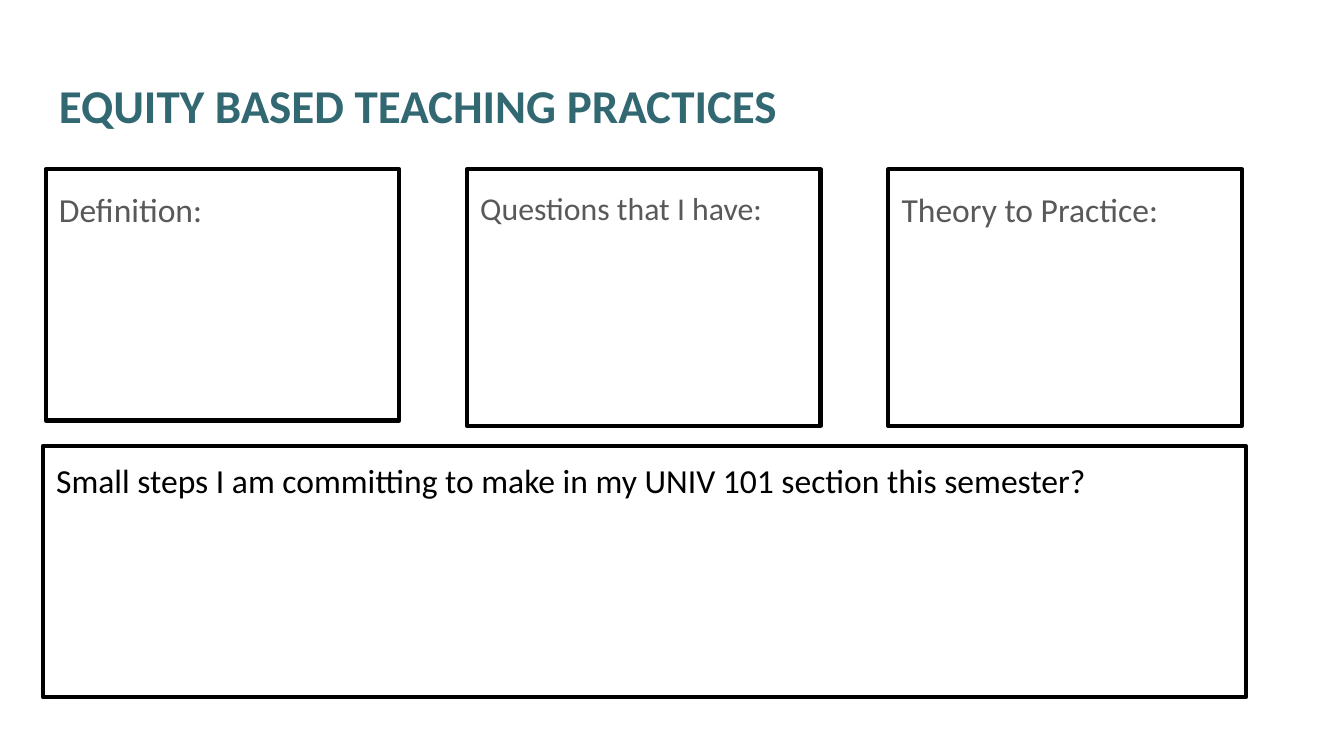
from pptx import Presentation
from pptx.dml.color import RGBColor
from pptx.enum.shapes import MSO_SHAPE as Shape
from pptx.enum.text import MSO_ANCHOR as Anchor, PP_ALIGN as Align
from pptx.util import Pt

COLORS = {"title": "326872", "prompt": "595959", "ink": "000000"}
FONT = "Calibri"
PAD = 7.2
LEFT, TOP, WIDE, PITCH = 24.5, 90.7, 189.4, 225.7
PROMPTS = [
    ("Definition:", 18, 134.6),
    ("Questions that I have:", 17, 137.5),
    ("Theory to Practice:", 18, 137.5),
]


def write(shape, text, size, color, bold=False, space=1.0):
    frame = shape.text_frame
    frame.word_wrap = True
    frame.vertical_anchor = Anchor.TOP
    frame.margin_left = frame.margin_right = Pt(PAD)
    frame.margin_top = frame.margin_bottom = Pt(PAD)
    para = frame.paragraphs[0]
    para.text = text
    para.alignment = Align.LEFT
    para.line_spacing = space
    font = para.font
    font.name, font.size, font.bold = FONT, Pt(size), bold
    font.color.rgb = RGBColor.from_string(COLORS[color])


def add_title(slide, text):
    box = slide.shapes.add_textbox(Pt(LEFT), Pt(33.8), Pt(671), Pt(45.4))
    write(box, text, 25.2, "title", bold=True)


def add_box(slide, left, top, width, height):
    box = slide.shapes.add_shape(
        Shape.RECTANGLE, Pt(left), Pt(top), Pt(width), Pt(height))
    box.shadow.inherit = False
    box.fill.background()
    box.line.color.rgb = RGBColor.from_string(COLORS["ink"])
    box.line.width = Pt(2.25)
    return box


def main():
    deck = Presentation()
    deck.slide_width, deck.slide_height = Pt(720), Pt(405)
    slide = deck.slides.add_slide(deck.slide_layouts[6])

    for col, (text, size, height) in enumerate(PROMPTS):
        box = add_box(slide, LEFT + col * PITCH, TOP, WIDE, height)
        write(box, text, size, "prompt", space=1.15)

    add_title(slide, "EQUITY BASED TEACHING PRACTICES")
    steps = add_box(slide, 23, 239, 644.4, 134.6)
    write(steps, "Small steps I am committing to make in my UNIV 101 "
          "section this semester?", 18, "ink")

    deck.save("out.pptx")


if __name__ == "__main__":
    main()
